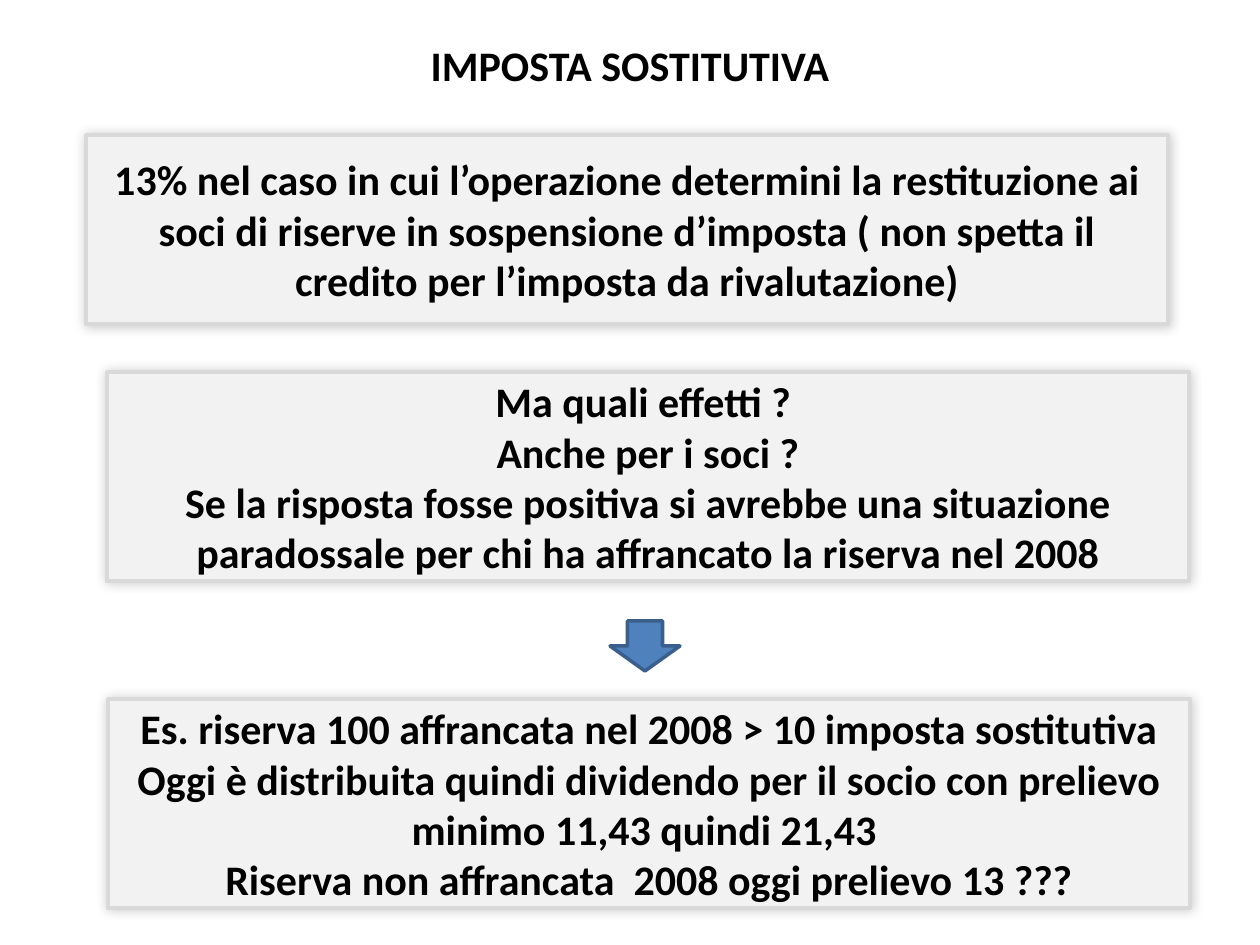
from lxml import etree
from pptx import Presentation
from pptx.dml.color import RGBColor as RGB
from pptx.enum.shapes import MSO_SHAPE as Kind
from pptx.enum.text import MSO_ANCHOR as Anchor, PP_ALIGN as Align
from pptx.oxml.ns import qn
from pptx.util import Emu, Pt

COLORS = {"text": "000000", "panel": "F2F2F2", "edge": "D9D9D9",
          "arrow": "4F81BD", "rim": "3A5F8C", "shade": "000000"}
SCALE = 914400 / 126  # EMU in one px


def px(*sizes):
    return [Emu(round(size * SCALE)) for size in sizes]


class Deck:
    font, size, line = "Calibri", 24, 2

    def __init__(self, wide, high):
        self.prs = Presentation()
        self.prs.slide_width, self.prs.slide_height = px(wide, high)
        self.slide = self.prs.slides.add_slide(self.prs.slide_layouts[6])

    def color(self, name):
        return RGB.from_string(COLORS[name])

    def label(self, shape, lines):
        frame = shape.text_frame
        frame.word_wrap = True
        frame.vertical_anchor = Anchor.MIDDLE
        frame.text = "\n".join(lines)
        for para in frame.paragraphs:
            para.alignment = Align.CENTER
            para.font.name, para.font.size = self.font, Pt(self.size)
            para.font.bold = True
            para.font.color.rgb = self.color("text")

    def title(self, box, text):
        self.label(self.slide.shapes.add_textbox(*px(*box)), [text])

    def shape(self, kind, box, fill, line):
        shape = self.slide.shapes.add_shape(kind, *px(*box))
        shape.shadow.inherit = False
        shape.fill.solid()
        shape.fill.fore_color.rgb = self.color(fill)
        shape.line.color.rgb = self.color(line)
        shape.line.width = Pt(self.line)
        return shape

    def shade(self, shape):
        effects = shape._element.spPr.find(qn("a:effectLst"))
        outer = etree.SubElement(effects, qn("a:outerShdw"), blurRad=str(Pt(6)),
                                 dist="0", dir=str(225 * 60000), rotWithShape="0")
        tint = etree.SubElement(outer, qn("a:srgbClr"), val=COLORS["shade"])
        etree.SubElement(tint, qn("a:alpha"), val="20000")

    def panel(self, box, lines):
        shape = self.shape(Kind.RECTANGLE, box, "panel", "edge")
        self.shade(shape)
        self.label(shape, lines)

    def arrow(self, box):
        self.shape(Kind.DOWN_ARROW, box, "arrow", "rim")


def main():
    deck = Deck(1260, 945)

    # Title
    deck.title((0, 27, 1260, 76), "IMPOSTA SOSTITUTIVA")

    # Tax rate
    deck.panel((86, 135, 1082, 189), [
        "13% nel caso in cui l’operazione determini la restituzione ai soci "
        "di riserve in sospensione d’imposta ( non spetta il credito per "
        "l’imposta da rivalutazione)"])

    # Open questions
    deck.panel((107, 372, 1082, 209), [
        "Ma quali effetti ? ",
        "Anche per i soci ?",
        "Se la risposta fosse positiva si avrebbe una situazione paradossale "
        "per chi ha affrancato la riserva nel 2008"])

    # Arrow to the worked example
    deck.arrow((610, 621, 70, 50))
    deck.panel((108, 699, 1082, 209), [
        "Es. riserva 100 affrancata nel 2008 > 10 imposta sostitutiva",
        "Oggi è distribuita quindi dividendo per il socio con prelievo minimo "
        "11,43 quindi 21,43 ",
        "Riserva non affrancata  2008 oggi prelievo 13 ???"])

    deck.prs.save("out.pptx")


if __name__ == "__main__":
    main()
